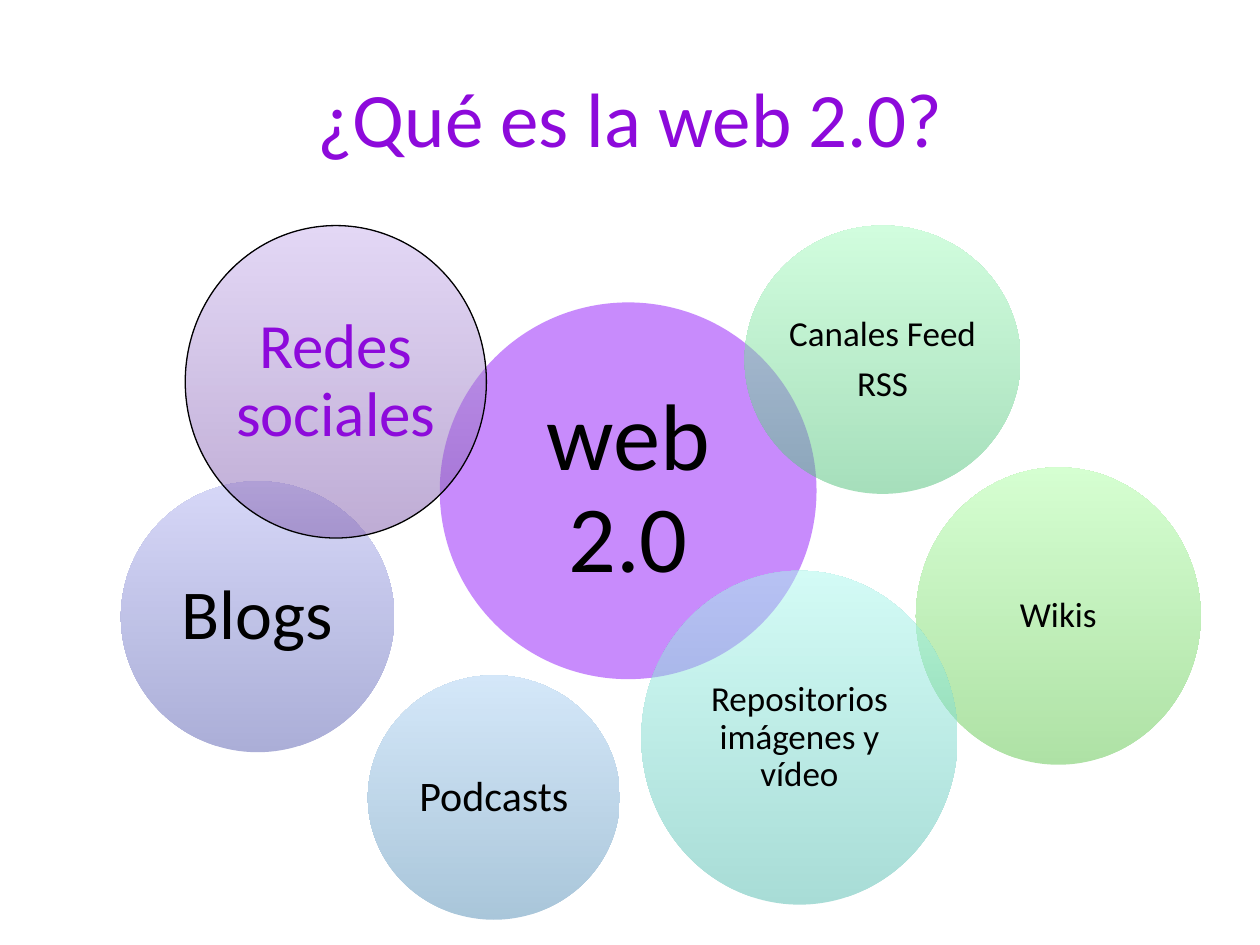
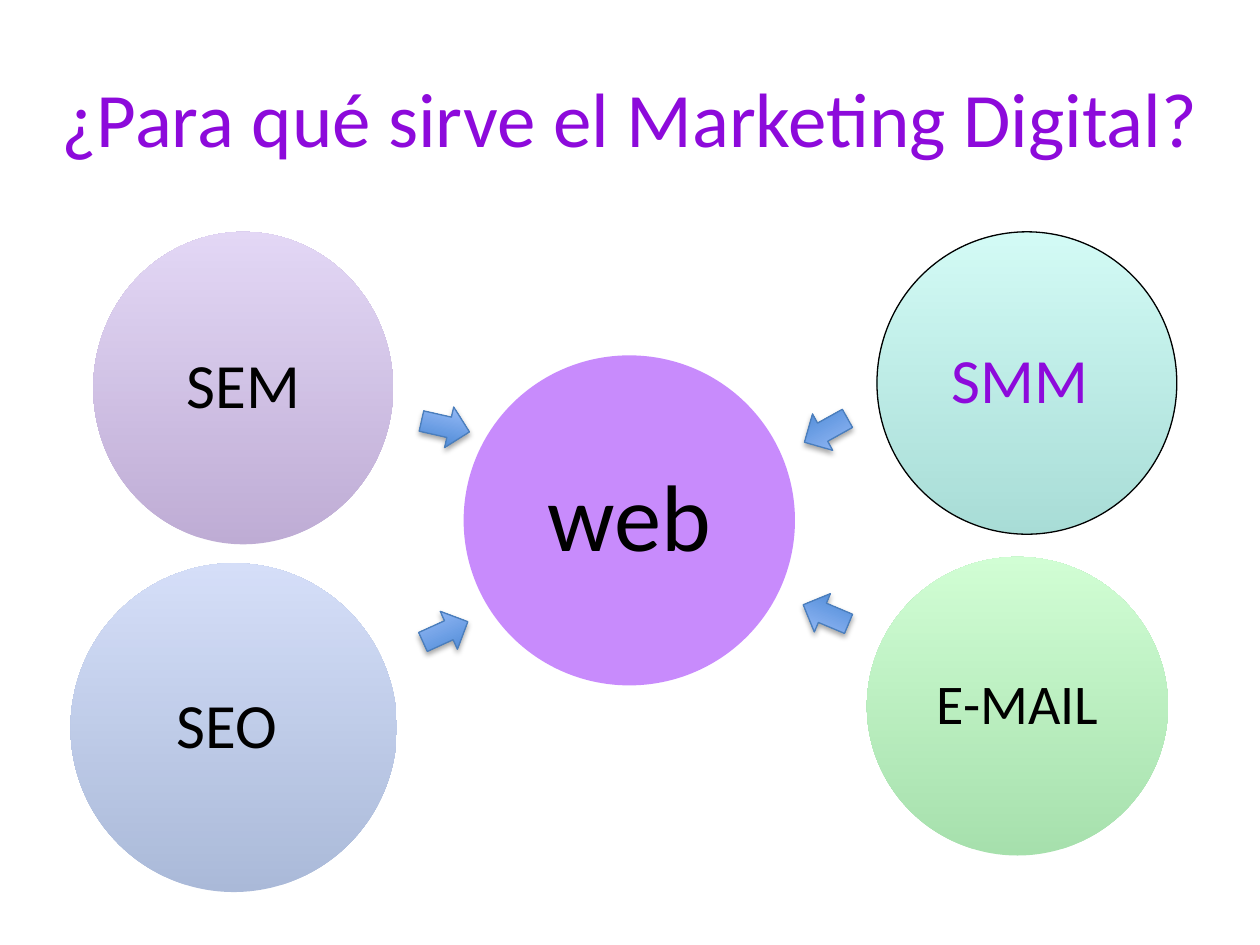
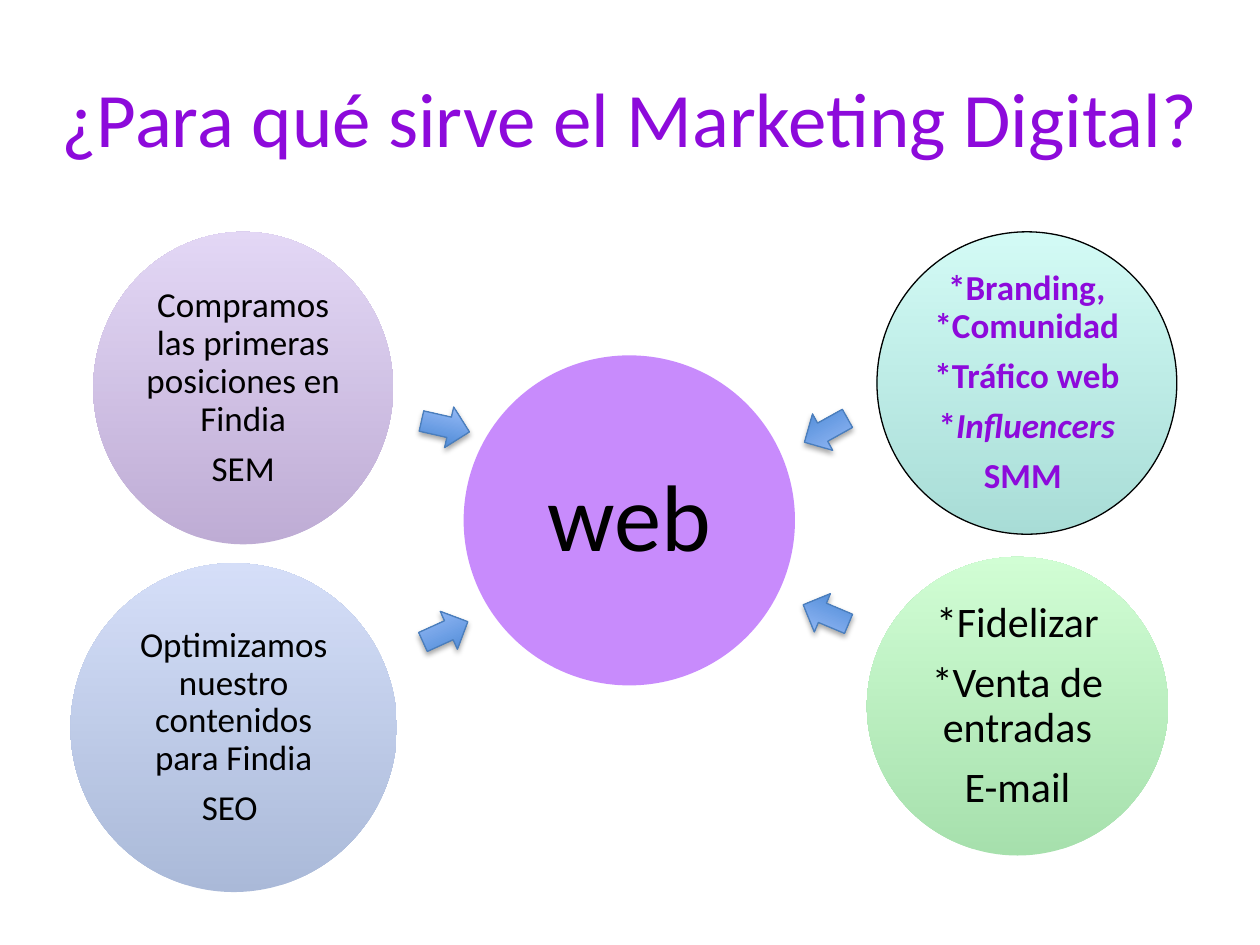
"""Build three slides of overlapping circles about the web 2.0 and digital marketing."""

from dataclasses import dataclass, replace

from lxml import etree
from pptx import Presentation
from pptx.dml.color import RGBColor
from pptx.enum.shapes import MSO_SHAPE
from pptx.enum.text import MSO_ANCHOR, PP_ALIGN
from pptx.oxml.ns import qn
from pptx.util import Inches, Pt

ELLIPSE = MSO_SHAPE.OVAL
ARROW = MSO_SHAPE.RIGHT_ARROW
MIDDLE = MSO_ANCHOR.MIDDLE
CENTER = PP_ALIGN.CENTER
TITLE_ONLY = 5


@dataclass(frozen=True)
class Theme:
    font: str = "Calibri"
    white: str = "FFFFFF"
    ink: str = "000000"
    accent: str = "8D0ADB"
    hub: tuple = ("9219FB",)
    violet: tuple = ("7F5BAB", "C8B0ED")
    indigo: tuple = ("585EB1", "AEB1F1")
    blue: tuple = ("5675B3", "ACBFF3")
    sky: tuple = ("558EB6", "ABD1F4")
    teal: tuple = ("52BBAF", "A8F8ED")
    mint: tuple = ("4FC079", "A5FCBE")
    green: tuple = ("4EC25B", "A4FEAB")
    lime: tuple = ("5FC54D", "ADFFA4")
    arrow: tuple = ("3F80CE", "A4C4FF")
    arrow_line: str = "4B7EBC"
    line: float = 0.75
    title: int = 44
    huge: int = 54
    xlarge: int = 40
    large: int = 36
    medium: int = 32
    small: int = 24
    tiny: int = 20


T = Theme()


@dataclass(frozen=True)
class Circle:
    left: float
    top: float
    width: float
    height: float
    fill: tuple
    size: int
    paragraphs: tuple
    focus: bool = False
    bold: bool = False
    italic: str = ""


@dataclass(frozen=True)
class Arrow:
    left: float
    top: float
    rotation: float
    width: float = 0.39
    height: float = 0.33


WEB_CIRCLES = (
    Circle(3.49, 2.4, 2.99, 2.99, T.hub, T.huge, ("web 2.0",)),
    Circle(7.27, 3.71, 2.26, 2.36, T.lime, T.tiny, ("Wikis",)),
    Circle(5.91, 1.79, 2.19, 2.13, T.mint, T.tiny, ("Canales Feed", "RSS")),
    Circle(5.09, 4.53, 2.51, 2.65, T.teal, T.tiny, ("Repositorios imágenes y vídeo",)),
    Circle(2.92, 5.36, 2, 1.94, T.sky, T.small, ("Podcasts",)),
    Circle(0.96, 3.82, 2.17, 2.15, T.indigo, T.xlarge, ("Blogs",)),
    Circle(1.47, 1.79, 2.39, 2.48, T.violet, T.large, ("Redes sociales ",), focus=True),
)

HUB = Circle(3.68, 2.82, 2.63, 2.62, T.hub, T.huge, ("web",))
EMAIL = Circle(6.88, 4.42, 2.39, 2.37, T.green, T.medium, ("E-MAIL",))
SMM = Circle(6.96, 1.84, 2.38, 2.4, T.teal, T.large, ("SMM ",), focus=True)
SEO = Circle(0.56, 4.47, 2.59, 2.61, T.blue, T.large, ("SEO ",))
SEM = Circle(0.74, 1.84, 2.38, 2.48, T.violet, T.large, ("SEM",))

CHANNELS = (HUB, EMAIL, SMM, SEO, SEM)
CHANNEL_GOALS = (
    HUB,
    replace(EMAIL, size=T.small, paragraphs=("*Fidelizar", "*Venta de entradas", "E-mail")),
    replace(
        SMM, size=T.tiny, bold=True, italic="Influencers",
        paragraphs=("*Branding, *Comunidad", "*Tráfico web", "*Influencers", "SMM "),
    ),
    replace(
        SEO, size=T.tiny,
        paragraphs=("Optimizamos nuestro contenidos para Findia", "SEO "),
    ),
    replace(
        SEM, size=T.tiny,
        paragraphs=("Compramos las primeras posiciones en Findia", "SEM"),
    ),
)
ARROWS = (
    Arrow(3.34, 3.22, 12.7),
    Arrow(3.34, 4.85, 335.6),
    Arrow(6.36, 3.25, 150.9),
    Arrow(6.36, 4.71, 202.8),
)

MARKETING_TITLE = "¿Para qué sirve el Marketing Digital?"
SLIDES = (
    ("¿Qué es la web 2.0?", WEB_CIRCLES, ()),
    (MARKETING_TITLE, CHANNELS, ARROWS),
    (MARKETING_TITLE, CHANNEL_GOALS, ARROWS),
)


def rgb(color: str) -> RGBColor:
    return RGBColor.from_string(color)


def add_text(p, text: str, *, size: int, color: str, bold: bool = False,
             italic: bool = False) -> None:
    r = p.add_run()
    r.text = text
    r.font.name = T.font
    r.font.size = Pt(size)
    r.font.color.rgb = rgb(color)
    r.font.bold = bold
    r.font.italic = italic


def set_fill(sp, colors: tuple, opacity: int = 100) -> None:
    if len(colors) == 1:
        sp.fill.solid()
        sp.fill.fore_color.rgb = rgb(colors[0])
    else:
        sp.fill.gradient()
        sp.fill.gradient_angle = 90
        for stop, color in zip(sp.fill.gradient_stops, colors):
            stop.color.rgb = rgb(color)
    if opacity < 100:
        for node in list(sp._element.spPr.iter(qn("a:srgbClr"))):
            etree.SubElement(node, qn("a:alpha"), val=str(opacity * 1000))


def set_line(sp, color: str) -> None:
    sp.line.color.rgb = rgb(color)
    sp.line.width = Pt(T.line)


def add_shape(slide, kind, item: Circle | Arrow):
    sp = slide.shapes.add_shape(
        kind, Inches(item.left), Inches(item.top), Inches(item.width), Inches(item.height)
    )
    sp.shadow.inherit = False
    return sp


def add_circle(slide, circle: Circle) -> None:
    sp = add_shape(slide, ELLIPSE, circle)
    set_fill(sp, circle.fill, opacity=50)
    if circle.focus:
        set_line(sp, T.ink)
    else:
        sp.line.fill.background()
    tf = sp.text_frame
    tf.word_wrap = True
    tf.vertical_anchor = MIDDLE
    tf.margin_left = tf.margin_right = tf.margin_top = tf.margin_bottom = Pt(circle.size * 0.1)
    color = T.accent if circle.focus else T.ink
    for i, text in enumerate(circle.paragraphs):
        p = tf.add_paragraph() if i else tf.paragraphs[0]
        p.alignment = CENTER
        p.line_spacing = 0.9
        p.space_after = Pt(circle.size * 0.35)
        parts = text.partition(circle.italic) if circle.italic else (text,)
        for part in filter(None, parts):
            add_text(p, part, size=circle.size, color=color, bold=circle.bold,
                     italic=part == circle.italic)


def add_arrow(slide, arrow: Arrow) -> None:
    sp = add_shape(slide, ARROW, arrow)
    sp.rotation = arrow.rotation
    set_fill(sp, T.arrow)
    set_line(sp, T.arrow_line)
    effects = sp._element.spPr.find(qn("a:effectLst"))
    shadow = etree.SubElement(
        effects, qn("a:outerShdw"), blurRad=str(Pt(3.1)), dist=str(Pt(1.8)),
        dir="5400000", rotWithShape="0",
    )
    color = etree.SubElement(shadow, qn("a:srgbClr"), val=T.ink)
    etree.SubElement(color, qn("a:alpha"), val="35000")


def set_title(slide, text: str) -> None:
    sp = slide.shapes.title
    sp.left, sp.top, sp.width, sp.height = Inches(0), Inches(0.3), Inches(10), Inches(1.25)
    set_fill(sp, (T.white,))
    tf = sp.text_frame
    tf.word_wrap = True
    tf.vertical_anchor = MIDDLE
    p = tf.paragraphs[0]
    p.alignment = CENTER
    add_text(p, text, size=T.title, color=T.accent)


def main() -> None:
    prs = Presentation()
    prs.slide_width, prs.slide_height = Inches(10), Inches(7.5)
    for title, circles, arrows in SLIDES:
        slide = prs.slides.add_slide(prs.slide_layouts[TITLE_ONLY])
        set_title(slide, title)
        for circle in circles:
            add_circle(slide, circle)
        for arrow in arrows:
            add_arrow(slide, arrow)
    prs.save("out.pptx")


if __name__ == "__main__":
    main()
